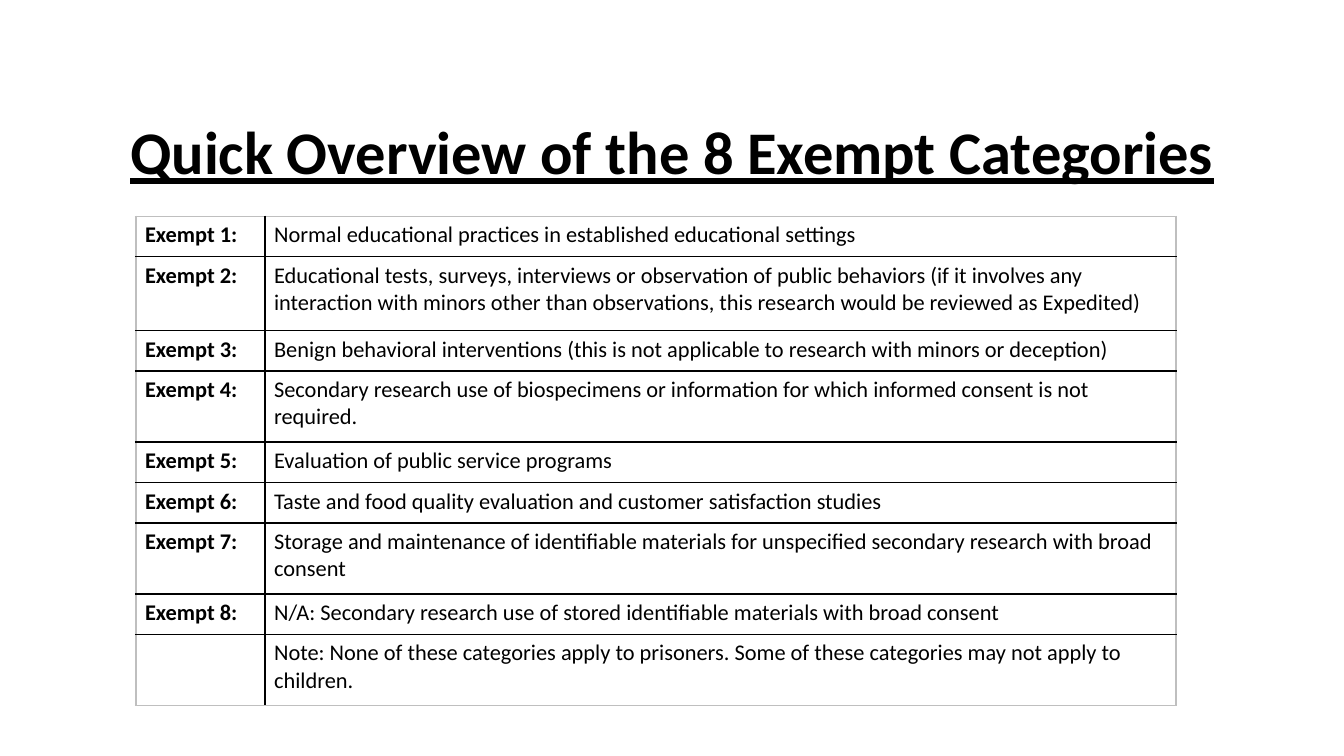
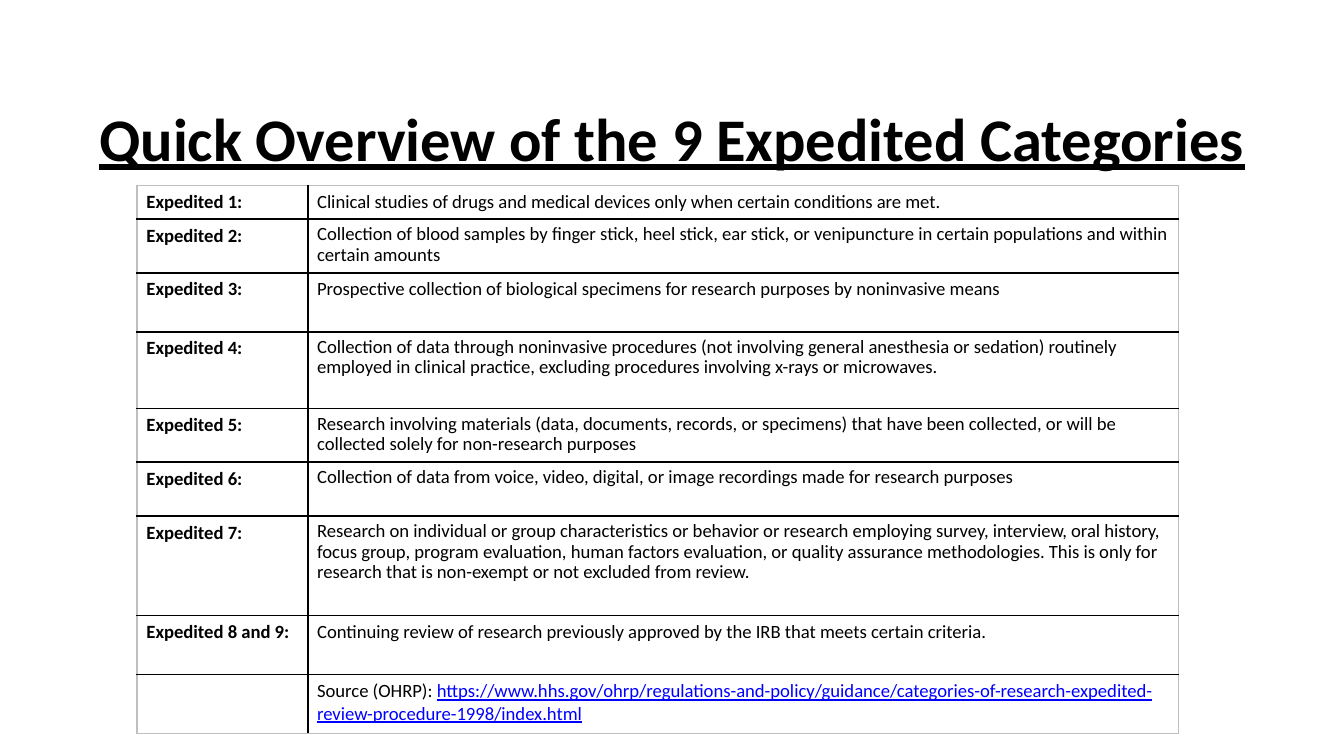
from collections import namedtuple

from lxml import etree
from pptx import Presentation, util as u
from pptx.dml.color import RGBColor
from pptx.enum import text
from pptx.oxml.ns import qn

# All lengths are columns and rows of a grid with cells of a tenth of an inch.
GRID = u.Inches(0.1)
COLUMNS, ROWS = 100, 56.25
TITLE_ONLY = 5

FONT = "Calibri"
INK, LINK, FRAME, PAPER = "000000", "0000FF", "BFBFBF", "FFFFFF"
TITLE_FORMAT = {"name": FONT, "size": u.Pt(32.4), "bold": True, "underline": True}
CELL_MARGINS = {"margin_left": 0.7, "margin_right": 0.7,
                "margin_top": 0.4, "margin_bottom": 0.4}

Box = namedtuple("Box", "left top width height")
Category = namedtuple("Category", "label summary height spacing", defaults=[None])

EXEMPT = [
    Category("Exempt 1:", "Normal educational practices in established educational settings", 3),
    Category("Exempt 2:", "Educational tests, surveys, interviews or observation of public "
             "behaviors (if it involves any interaction with minors other than observations, "
             "this research would be reviewed as Expedited)", 5.5),
    Category("Exempt 3:", "Benign behavioral interventions (this is not applicable to research "
             "with minors or deception)", 3),
    Category("Exempt 4:", "Secondary research use of biospecimens or information for which "
             "informed consent is not required.", 5.3),
    Category("Exempt 5:", "Evaluation of public service programs", 3),
    Category("Exempt 6:", "Taste and food quality evaluation and customer satisfaction studies", 3),
    Category("Exempt 7:", "Storage and maintenance of identifiable materials for unspecified "
             "secondary research with broad consent", 5.3),
    Category("Exempt 8:", "N/A: Secondary research use of stored identifiable materials with "
             "broad consent", 3),
    Category("", "Note: None of these categories apply to prisoners. Some of these categories "
             "may not apply to children.", 5.3),
]

EXPEDITED = [
    Category("Expedited 1:", "Clinical studies of drugs and medical devices only when certain "
             "conditions are met.", 2.5),
    Category("Expedited 2:", "Collection of blood samples by finger stick, heel stick, ear stick, "
             "or venipuncture in certain populations and within certain amounts", 4, 0.9),
    Category("Expedited 3:", "Prospective collection of biological specimens for research "
             "purposes by noninvasive means", 4.4),
    Category("Expedited 4:", "Collection of data through noninvasive procedures (not involving "
             "general anesthesia or sedation) routinely employed in clinical practice, excluding "
             "procedures involving x-rays or microwaves.", 5.7, 0.9),
    Category("Expedited 5:", "Research involving materials (data, documents, records, or "
             "specimens) that have been collected, or will be collected solely for non-research "
             "purposes", 4, 0.9),
    Category("Expedited 6:", "Collection of data from voice, video, digital, or image recordings "
             "made for research purposes", 4, 0.9),
    Category("Expedited 7:", "Research on individual or group characteristics or behavior or "
             "research employing survey, interview, oral history, focus group, program "
             "evaluation, human factors evaluation, or quality assurance methodologies. This is "
             "only for research that is non-exempt or not excluded from review.", 7.4, 0.9),
    Category("Expedited 8 and 9:", "Continuing review of research previously approved by the IRB "
             "that meets certain criteria.", 4.4),
    Category("", "Source (OHRP): https://www.hhs.gov/ohrp/regulations-and-policy/guidance/"
             "categories-of-research-expedited-review-procedure-1998/index.html", 4.4),
]


def grid(cells):
    return round(cells * GRID)


def color(hex_value):
    return RGBColor.from_string(hex_value)


def apply_format(target, values):
    for attribute, value in values.items():
        setattr(target, attribute, value)


def add_title(slide, wording, box):
    title = slide.shapes.title
    apply_format(title, {side: grid(cells) for side, cells in box._asdict().items()})
    frame = title.text_frame
    apply_format(frame, {"text": wording, "word_wrap": True,
                         "auto_size": text.MSO_AUTO_SIZE.NONE,
                         "vertical_anchor": text.MSO_ANCHOR.MIDDLE})
    heading = frame.paragraphs[0]
    heading.alignment = text.PP_ALIGN.CENTER
    apply_format(heading.runs[0].font, TITLE_FORMAT)
    heading.runs[0].font.color.rgb = color(INK)


def set_borders(cell, edges):
    """Draw the cell's left, right, top and bottom lines in the given colours."""
    properties = cell._tc.get_or_add_tcPr()
    for position, (side, hex_value) in enumerate(edges.items()):
        line = etree.Element(qn(f"a:ln{side}"), w=str(u.Pt(1)))
        fill = etree.SubElement(line, qn("a:solidFill"))
        etree.SubElement(fill, qn("a:srgbClr"), val=hex_value)
        properties.insert(position, line)


def write_cell(cell, wording, size, bold=False, spacing=None):
    """Fill a cell, showing a web address at the end of its text as a link."""
    apply_format(cell, {side: grid(cells) for side, cells in CELL_MARGINS.items()})
    cell.fill.solid()
    cell.fill.fore_color.rgb = color(PAPER)
    paragraph = cell.text_frame.paragraphs[0]
    paragraph.line_spacing = spacing
    paragraph.font.size = u.Pt(size)
    plain, scheme, address = wording.partition("https://")
    for part, hex_value, underline in ((plain, INK, None), (scheme + address, LINK, True)):
        if part:
            run = paragraph.add_run()
            run.text = part
            apply_format(run.font, {"name": FONT, "size": u.Pt(size),
                                    "bold": bold, "underline": underline})
            run.font.color.rgb = color(hex_value)


def add_category_table(slide, categories, box, label_width, size):
    frame = slide.shapes.add_table(len(categories), 2, *map(grid, box))
    table = frame.table
    apply_format(table, {"first_row": False, "horz_banding": False})
    for column, width in zip(table.columns, (label_width, box.width - label_width)):
        column.width = grid(width)
    last = len(categories) - 1
    for index, category in enumerate(categories):
        table.rows[index].height = grid(category.height)
        label, summary = table.rows[index].cells
        write_cell(label, category.label, size, bold=True)
        write_cell(summary, category.summary, size, spacing=category.spacing)
        across = {"T": INK if index else FRAME, "B": INK if index < last else FRAME}
        set_borders(label, {"L": FRAME, "R": INK, **across})
        set_borders(summary, {"L": INK, "R": FRAME, **across})


def add_overview(deck, heading, title_top, categories, left, top, width, label_width, size):
    slide = deck.slides.add_slide(deck.slide_layouts[TITLE_ONLY])
    height = sum(category.height for category in categories)
    add_category_table(slide, categories, Box(left, top, width, height), label_width, size)
    add_title(slide, heading, Box(5, title_top, COLUMNS - 10, 7))


def main():
    deck = Presentation()
    apply_format(deck, {"slide_width": grid(COLUMNS), "slide_height": grid(ROWS)})
    add_overview(deck, "Quick Overview of the 8 Exempt Categories", 7.7, EXEMPT,
                 left=10.1, top=16.1, width=77.4, label_width=9.6, size=12)
    add_overview(deck, "Quick Overview of the 9 Expedited Categories", 6.7, EXPEDITED,
                 left=10.2, top=13.8, width=77.5, label_width=12.7, size=10)
    deck.save("out.pptx")


if __name__ == "__main__":
    main()
